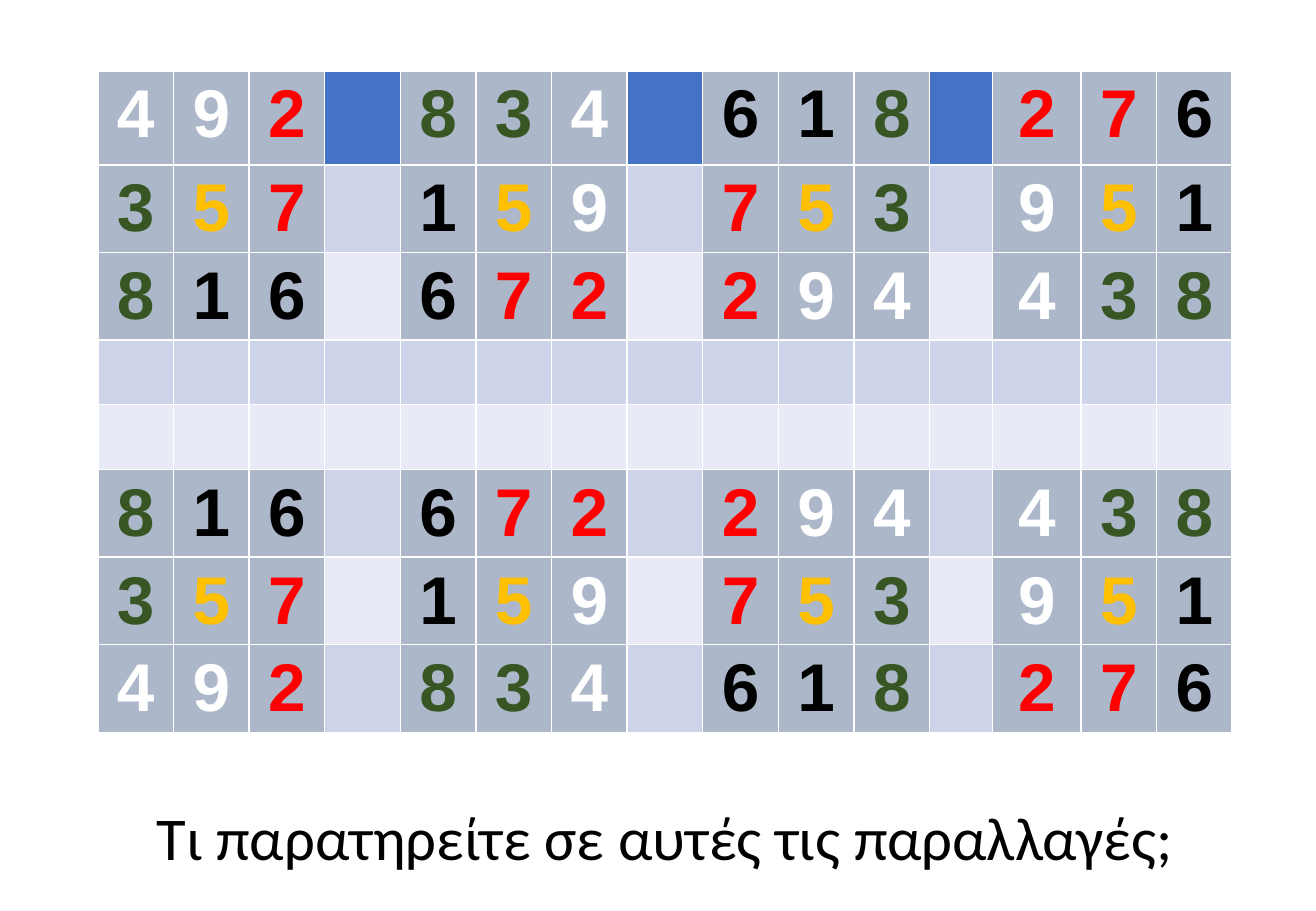
from pptx import Presentation
from pptx.dml.color import RGBColor
from pptx.enum.text import MSO_ANCHOR as Anchor, PP_ALIGN as Align
from pptx.util import Pt

# Content: four magic squares side by side, then the same rows mirrored
QUESTION = "Τι παρατηρείτε σε αυτές τις παραλλαγές;"
SQUARE_ROWS = ["492 834 618 276", "357 159 753 951", "816 672 294 438"]
EMPTY_ROW = " " * 15
ROWS = SQUARE_ROWS + [EMPTY_ROW] * 2 + SQUARE_ROWS[::-1]

# Colours
WHITE = RGBColor(0xFF, 0xFF, 0xFF)
BLACK = RGBColor(0x00, 0x00, 0x00)
RED = RGBColor(0xFF, 0x00, 0x00)
GREEN = RGBColor(0x38, 0x56, 0x23)
GOLD = RGBColor(0xFF, 0xC0, 0x00)
SQUARE_FILL = RGBColor(0xAC, 0xB8, 0xCA)
HEADER_FILL = RGBColor(0x44, 0x72, 0xC4)
ODD_BAND = RGBColor(0xCD, 0xD4, 0xEA)
EVEN_BAND = RGBColor(0xE8, 0xEB, 0xF5)
DIGIT_GROUPS = {"49": WHITE, "27": RED, "38": GREEN, "16": BLACK, "5": GOLD}
DIGIT_COLORS = {digit: color for group, color in DIGIT_GROUPS.items() for digit in group}

# Sizes in points
LEFT, TOP, WIDTH = 58, 42, 672.6
COLUMN_WIDTHS = [44.84] * 11 + [37.4, 52.36] + [44.84] * 2
ROW_HEIGHTS = [55.7, 51.8, 51.8, 38.5, 38.5, 51.8, 51.8, 51.8]


def add_span(para, text, font, size, color, bold=False):
    para.alignment = Align.CENTER
    span = para.add_run()
    span.text = text
    span.font.name = font
    span.font.size = Pt(size)
    span.font.bold = bold
    span.font.color.rgb = color


def gap_fill(row):
    if row == 0:
        return HEADER_FILL
    return ODD_BAND if row % 2 else EVEN_BAND


deck = Presentation()
deck.slide_width, deck.slide_height = Pt(780), Pt(540)
page = deck.slides.add_slide(deck.slide_layouts[6])

# Table of squares
frame = page.shapes.add_table(len(ROWS), len(COLUMN_WIDTHS), Pt(LEFT), Pt(TOP),
                              Pt(WIDTH), Pt(sum(ROW_HEIGHTS)))
table = frame.table
for column, width in zip(table.columns, COLUMN_WIDTHS):
    column.width = Pt(width)
for line, height in zip(table.rows, ROW_HEIGHTS):
    line.height = Pt(height)

for row, digits in enumerate(ROWS):
    for col, digit in enumerate(digits):
        cell = table.cell(row, col)
        cell.margin_left = cell.margin_right = Pt(5.4)
        cell.fill.solid()
        if digit == " ":
            cell.fill.fore_color.rgb = gap_fill(row)
        else:
            cell.fill.fore_color.rgb = SQUARE_FILL
            add_span(cell.text_frame.paragraphs[0], digit, "Arial", 40,
                     DIGIT_COLORS[digit], bold=True)

# Question below the table
box = page.shapes.add_textbox(Pt(LEFT), Pt(468.7), Pt(WIDTH), Pt(59))
box.text_frame.word_wrap = True
box.text_frame.vertical_anchor = Anchor.MIDDLE
para = box.text_frame.paragraphs[0]
para.line_spacing = 0.9
add_span(para, QUESTION, "Calibri", 36, BLACK)

deck.save("out.pptx")
